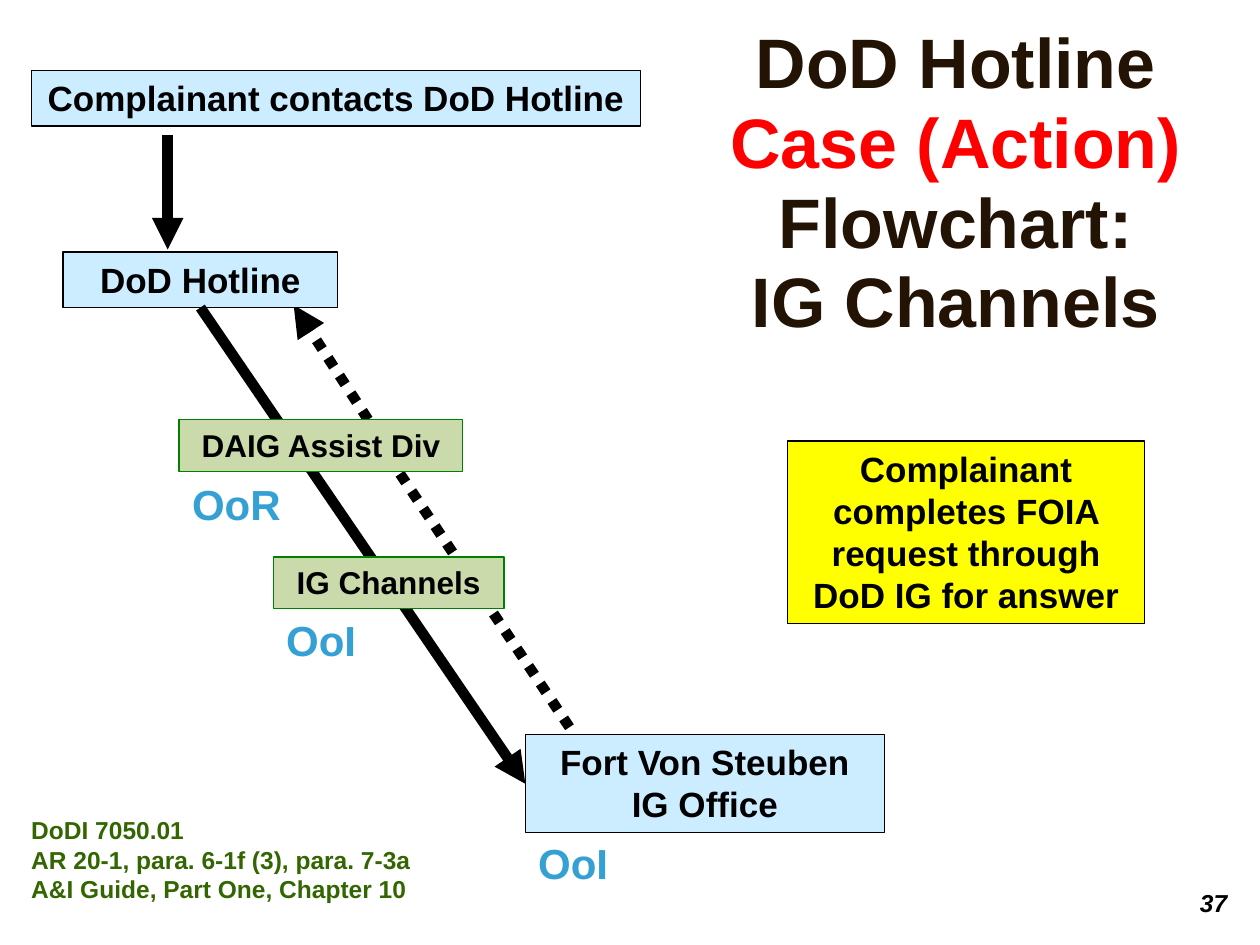
from typing import NamedTuple

from lxml.etree import SubElement
from pptx import Presentation
from pptx.dml.color import RGBColor
from pptx.enum.dml import MSO_LINE
from pptx.enum.shapes import MSO_CONNECTOR, MSO_SHAPE
from pptx.enum.text import MSO_ANCHOR, PP_ALIGN
from pptx.oxml.ns import qn
from pptx.util import Cm, Pt

BLACK, RED, BROWN = "000000", "FF0000", "221304"
PALE_BLUE, PALE_GREEN, YELLOW = "CCECFF", "CADAAA", "FFFF00"
GREEN, DARK_GREEN, ROLE_BLUE = "008000", "336600", "35A0D3"


class Area(NamedTuple):
    left: float
    top: float
    width: float
    height: float


class Box(NamedTuple):
    text: str
    area: Area
    fill: str = PALE_BLUE
    outline: str = BLACK
    size: int = 20


class Arrow(NamedTuple):
    start: tuple[float, float]
    end: tuple[float, float]
    dotted: bool = False
    head: bool = True


class Label(NamedTuple):
    text: str
    area: Area


RETURN_ARROWS = [
    Arrow((11.48, 14.66), (8.05, 9.53), dotted=True, head=False),
    Arrow((7.42, 8.46), (5.92, 6.15), dotted=True),
]
REFERRAL_ARROWS = [
    Arrow((3.38, 2.72), (3.38, 5.03)),
    Arrow((4.04, 6.2), (10.59, 15.8)),
]
OFFICE_BOXES = [
    Box("Complainant contacts DoD Hotline", Area(0.64, 1.42, 12.27, 1.12)),
    Box("Fort Von Steuben\nIG Office", Area(10.59, 14.81, 7.24, 1.98)),
    Box("DoD Hotline", Area(1.27, 5.08, 5.54, 1.12)),
]
CHANNEL_BOXES = [
    Box("DAIG Assist Div", Area(3.61, 8.46, 5.72, 1.04), PALE_GREEN, GREEN, 18),
    Box("IG Channels", Area(5.51, 11.23, 4.65, 1.04), PALE_GREEN, GREEN, 18),
    Box("Complainant completes FOIA request through DoD IG for answer",
        Area(15.88, 8.89, 7.19, 3.68), YELLOW),
]
ROLE_LABELS = [
    Label("OoR", Area(3.61, 9.53, 2.31, 1.27)),
    Label("OoI", Area(5.51, 12.27, 1.93, 1.27)),
    Label("OoI", Area(10.59, 16.76, 1.93, 1.27)),
]
TITLE_PARTS = [
    ("DoD Hotline\v", BROWN),
    ("Case (Action) ", RED),
    ("Flowchart:\vIG Channels", BROWN),
]
REFERENCES = (
    "DoDI 7050.01\n"
    "AR 20-1, para. 6-1f (3), para. 7-3a\n"
    "A&I Guide, Part One, Chapter 10"
)


def color(value: str) -> RGBColor:
    return RGBColor.from_string(value)


def lengths(area: Area) -> list[Cm]:
    return [Cm(value) for value in area]


def add_run(paragraph, text: str, *, size: int, fill: str, italic: bool = False) -> None:
    for index, piece in enumerate(text.split("\v")):
        if index:
            paragraph.add_line_break()
        if piece:
            run = paragraph.add_run()
            run.text = piece
            run.font.name = "Arial"
            run.font.size = Pt(size)
            run.font.bold = True
            run.font.italic = italic
            run.font.color.rgb = color(fill)


def write_text(shape, text: str, *, size: int, fill: str = BLACK, italic: bool = False,
               align=PP_ALIGN.CENTER, wrap: bool = True) -> None:
    frame = shape.text_frame
    frame.word_wrap = wrap
    frame.vertical_anchor = MSO_ANCHOR.TOP
    for index, line in enumerate(text.split("\n")):
        paragraph = frame.add_paragraph() if index else frame.paragraphs[0]
        paragraph.alignment = align
        add_run(paragraph, line, size=size, fill=fill, italic=italic)


def add_text(slide, text: str, area: Area, **text_format) -> None:
    write_text(slide.shapes.add_textbox(*lengths(area)), text, **text_format)


def add_box(slide, box: Box) -> None:
    shape = slide.shapes.add_shape(MSO_SHAPE.RECTANGLE, *lengths(box.area))
    shape.shadow.inherit = False
    shape.fill.solid()
    shape.fill.fore_color.rgb = color(box.fill)
    shape.line.color.rgb = color(box.outline)
    shape.line.width = Pt(0.75)
    write_text(shape, box.text, size=box.size)


def add_arrow(slide, arrow: Arrow) -> None:
    ends = [Cm(value) for value in (*arrow.start, *arrow.end)]
    connector = slide.shapes.add_connector(MSO_CONNECTOR.STRAIGHT, *ends)
    connector.line.color.rgb = color(BLACK)
    connector.line.width = Pt(6)
    if arrow.dotted:
        connector.line.dash_style = MSO_LINE.ROUND_DOT
    if arrow.head:
        SubElement(connector.line._get_or_add_ln(), qn("a:tailEnd"), type="triangle")
    SubElement(connector._element.spPr, qn("a:effectLst"))


def add_title(slide) -> None:
    shape = slide.shapes.add_textbox(*lengths(Area(13.13, 0.64, 12.27, 6.15)))
    frame = shape.text_frame
    frame.word_wrap = True
    frame.vertical_anchor = MSO_ANCHOR.MIDDLE
    paragraph = frame.paragraphs[0]
    paragraph.alignment = PP_ALIGN.CENTER
    paragraph.line_spacing = 0.95
    for text, fill in TITLE_PARTS:
        add_run(paragraph, text, size=40, fill=fill)


def main() -> None:
    presentation = Presentation()
    presentation.slide_width, presentation.slide_height = Cm(25.4), Cm(19.05)
    slide = presentation.slides.add_slide(presentation.slide_layouts[6])

    for arrow in RETURN_ARROWS:
        add_arrow(slide, arrow)
    add_title(slide)
    for box in OFFICE_BOXES:
        add_box(slide, box)
    for arrow in REFERRAL_ARROWS:
        add_arrow(slide, arrow)
    for box in CHANNEL_BOXES:
        add_box(slide, box)
    for label in ROLE_LABELS:
        add_text(slide, label.text, label.area, size=24, fill=ROLE_BLUE, wrap=False)
    add_text(slide, "37", Area(23.93, 17.78, 1.07, 0.84), size=14, italic=True, wrap=False)
    add_text(slide, REFERENCES, Area(0.38, 16.31, 10.59, 2.06), size=14,
             fill=DARK_GREEN, align=PP_ALIGN.LEFT)

    presentation.save("out.pptx")


if __name__ == "__main__":
    main()
